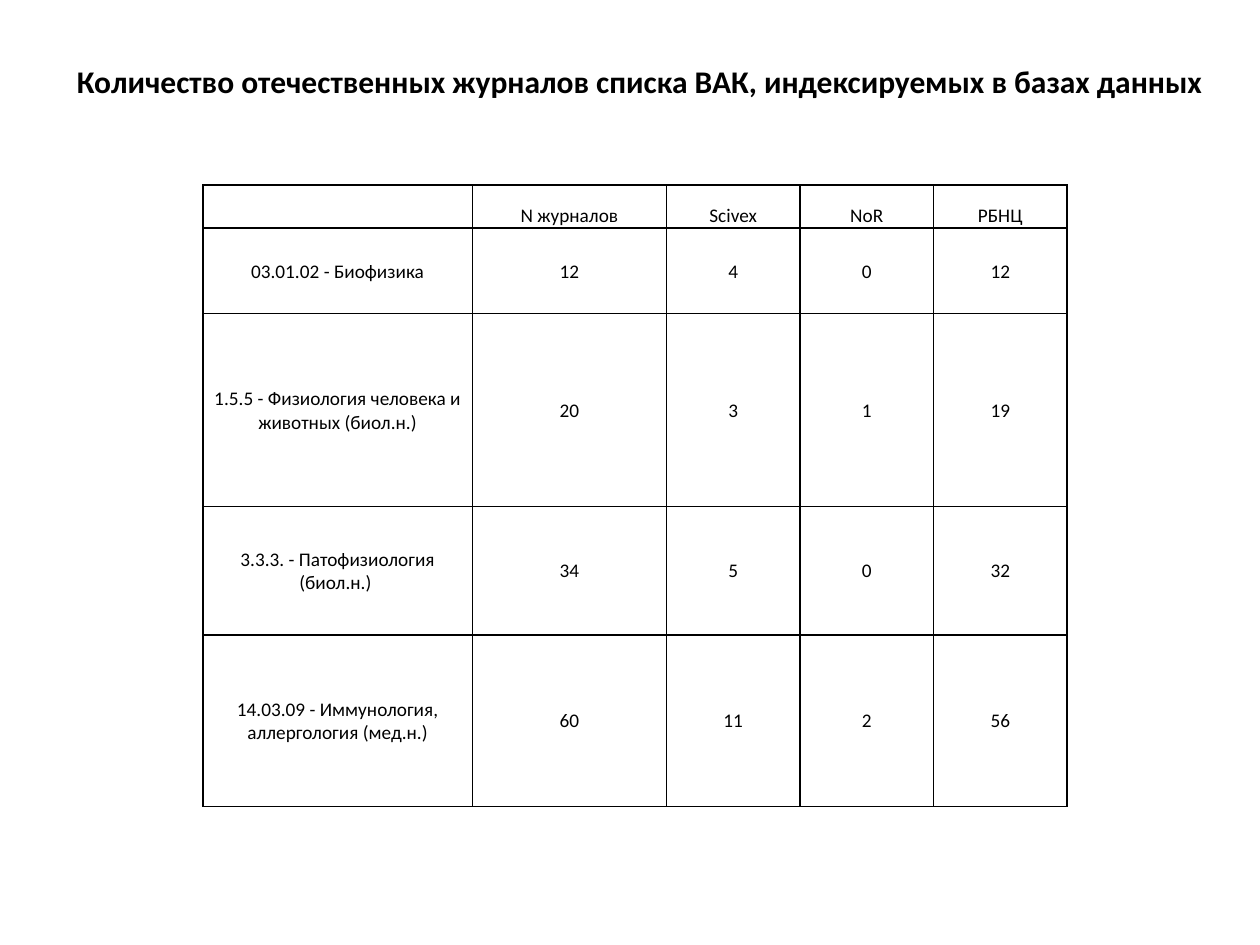
from lxml.etree import SubElement
from pptx import Presentation
from pptx.dml.color import RGBColor
from pptx.enum.text import MSO_ANCHOR as Anchor, PP_ALIGN as Align
from pptx.oxml.ns import qn
from pptx.util import Inches, Pt

TITLE = "Количество отечественных журналов списка ВАК, индексируемых в базах данных"
ROWS = [
    ("", "N журналов", "Scivex", "NoR", "РБНЦ"),
    ("03.01.02 - Биофизика", 12, 4, 0, 12),
    ("1.5.5 - Физиология человека и животных (биол.н.)", 20, 3, 1, 19),
    ("3.3.3. - Патофизиология (биол.н.) ", 34, 5, 0, 32),
    ("14.03.09 - Иммунология, аллергология (мед.н.)", 60, 11, 2, 56),
]
COLUMN_WIDTHS = (2.14, 1.54, 1.06, 1.06, 1.06)
ROW_UNIT = 0.34
ROW_UNITS = (1, 2, 4.5, 3, 4)
TABLE_LEFT, TABLE_TOP = 1.61, 1.47
BLACK, WHITE = "000000", "FFFFFF"


def color(value):
    return RGBColor.from_string(value)


def format_font(font, size, bold=False):
    font.name = "Calibri"
    font.size = Pt(size)
    font.bold = bold
    font.color.rgb = color(BLACK)


def add_borders(cell):
    properties = cell._tc.get_or_add_tcPr()
    for position, side in enumerate(("lnL", "lnR", "lnT", "lnB")):
        line = SubElement(properties, qn(f"a:{side}"), w=str(Pt(1)))
        fill = SubElement(line, qn("a:solidFill"))
        SubElement(fill, qn("a:srgbClr"), val=BLACK)
        properties.insert(position, line)


def format_cell(cell, value, anchor):
    cell.text = str(value)
    cell.vertical_anchor = anchor
    cell.margin_left = cell.margin_right = cell.margin_top = Inches(0.01)
    cell.margin_bottom = 0
    cell.fill.solid()
    cell.fill.fore_color.rgb = color(WHITE)
    paragraph = cell.text_frame.paragraphs[0]
    paragraph.alignment = Align.CENTER
    format_font(paragraph.font, 11)
    add_borders(cell)


def add_title(slide):
    title = slide.shapes.title
    title.left, title.top = Inches(0.51), Inches(0.44)
    title.width, title.height = Inches(9.29), Inches(0.4)
    title.text = TITLE
    title.text_frame.vertical_anchor = Anchor.TOP
    paragraph = title.text_frame.paragraphs[0]
    paragraph.alignment = Align.LEFT
    format_font(paragraph.font, 18, bold=True)


def add_journal_table(slide):
    table = slide.shapes.add_table(
        len(ROWS), len(COLUMN_WIDTHS), Inches(TABLE_LEFT), Inches(TABLE_TOP),
        Inches(sum(COLUMN_WIDTHS)), Inches(ROW_UNIT * sum(ROW_UNITS)),
    ).table
    for column, width in zip(table.columns, COLUMN_WIDTHS):
        column.width = Inches(width)
    for index, (row, units, values) in enumerate(zip(table.rows, ROW_UNITS, ROWS)):
        row.height = Inches(ROW_UNIT * units)
        anchor = Anchor.MIDDLE if index else Anchor.BOTTOM
        for cell, value in zip(row.cells, values):
            format_cell(cell, value, anchor)


def main():
    presentation = Presentation()
    presentation.slide_width, presentation.slide_height = Inches(10), Inches(7.5)
    slide = presentation.slides.add_slide(presentation.slide_layouts[5])
    add_journal_table(slide)
    add_title(slide)
    presentation.save("out.pptx")


if __name__ == "__main__":
    main()
